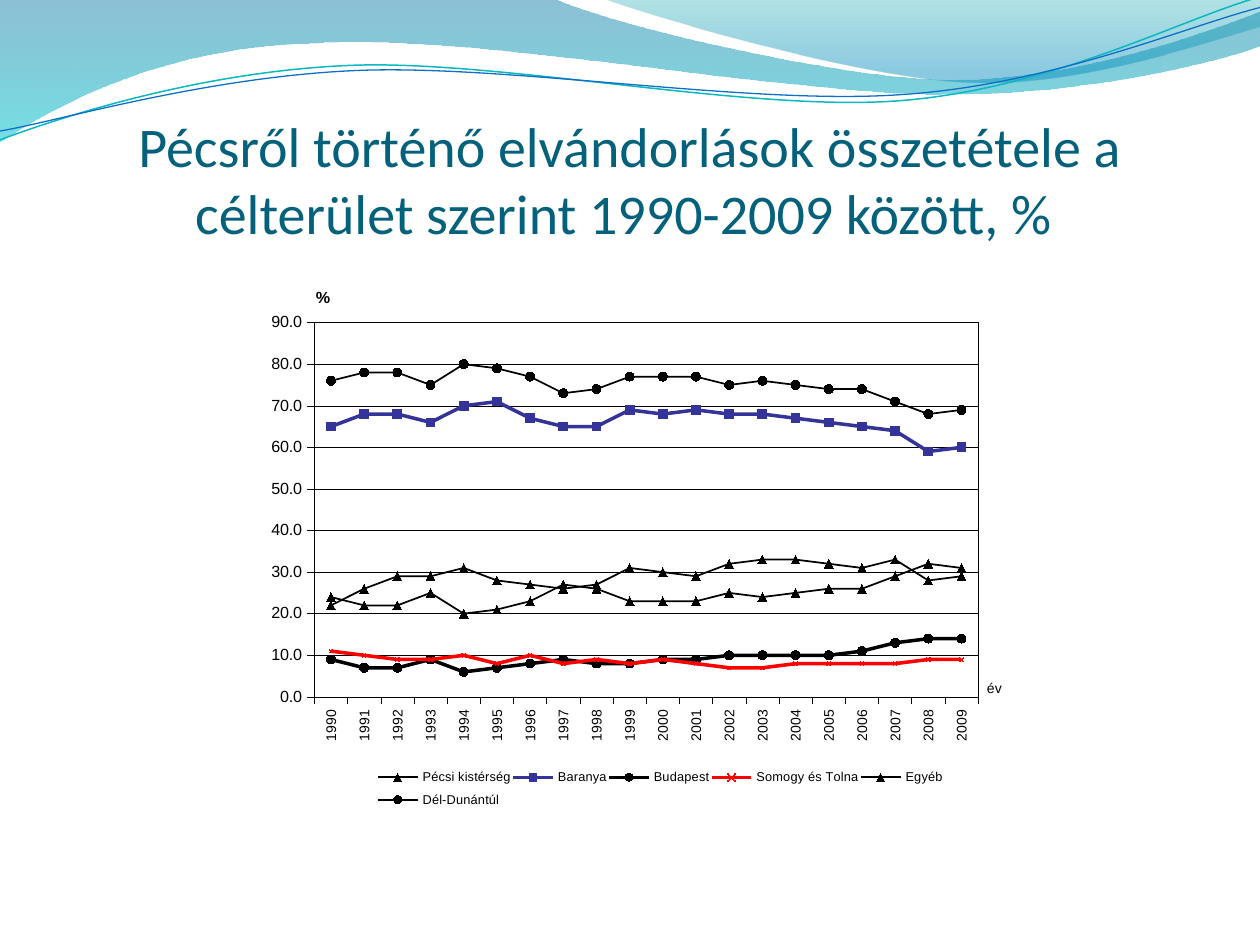
import math

from lxml import etree
from pptx import Presentation
from pptx.chart.data import CategoryChartData
from pptx.dml.color import RGBColor
from pptx.enum.chart import XL_CHART_TYPE, XL_LEGEND_POSITION, XL_MARKER_STYLE, XL_TICK_MARK
from pptx.enum.text import MSO_ANCHOR, PP_ALIGN
from pptx.oxml import parse_xml
from pptx.oxml.ns import nsdecls, qn
from pptx.util import Pt

TRIANGLE, SQUARE = XL_MARKER_STYLE.TRIANGLE, XL_MARKER_STYLE.SQUARE
CIRCLE, CROSS = XL_MARKER_STYLE.CIRCLE, XL_MARKER_STYLE.X
OUTSIDE, NO_TICK = XL_TICK_MARK.OUTSIDE, XL_TICK_MARK.NONE
LINE_MARKERS, BOTTOM = XL_CHART_TYPE.LINE_MARKERS, XL_LEGEND_POSITION.BOTTOM
MIDDLE, CENTER = MSO_ANCHOR.MIDDLE, PP_ALIGN.CENTER

THEME = {
    "title": "04617B", "ink": "000000", "paper": "FFFFFF", "baranya": "333399", "somogy": "FF0000",
    "title_font": "Calibri", "chart_font": "Arial",
    "title_size": 32, "year_size": 8, "value_size": 9.2, "legend_size": 7.3, "hairline": 0.25,
}

# Content
TITLE = "Pécsről történő elvándorlások összetétele a célterület szerint 1990-2009 között, % "
YEARS = [str(year) for year in range(1990, 2010)]
# name, colour, line width, marker, marker size, values
DESTINATIONS = [
    ("Pécsi kistérség", "ink", 1, TRIANGLE, 5,
     [22, 26, 29, 29, 31, 28, 27, 26, 27, 31, 30, 29, 32, 33, 33, 32, 31, 33, 28, 29]),
    ("Baranya", "baranya", 2, SQUARE, 5,
     [65, 68, 68, 66, 70, 71, 67, 65, 65, 69, 68, 69, 68, 68, 67, 66, 65, 64, 59, 60]),
    ("Budapest", "ink", 2, CIRCLE, 5,
     [9, 7, 7, 9, 6, 7, 8, 9, 8, 8, 9, 9, 10, 10, 10, 10, 11, 13, 14, 14]),
    ("Somogy és Tolna", "somogy", 2, CROSS, 2,
     [11, 10, 9, 9, 10, 8, 10, 8, 9, 8, 9, 8, 7, 7, 8, 8, 8, 8, 9, 9]),
    ("Egyéb", "ink", 1, TRIANGLE, 5,
     [24, 22, 22, 25, 20, 21, 23, 27, 26, 23, 23, 23, 25, 24, 25, 26, 26, 29, 32, 31]),
    ("Dél-Dunántúl", "ink", 1, CIRCLE, 5,
     [76, 78, 78, 75, 80, 79, 77, 73, 74, 77, 77, 77, 75, 76, 75, 74, 74, 71, 68, 69]),
]

# Header waves: a start, then line ends (one point) or curves (three points)
FILLED_WAVES = [
    ([[(0, 0)], [(316.8, -0.7)],
      [(342.7, 12.2), (478.1, 45.4), (545.8, 45.4)], [(614.2, 45.4), (689.8, 18.7), (720, 6.5)],
      [(720.7, 25.9)], [(707.8, 31.7), (626.4, 54.7), (537.1, 54)],
      [(447.8, 54), (275, 20.2), (185, 24.5)], [(92.9, 25.9), (33.1, 59.8), (-0.7, 81.4)]],
     [(0, "0074A1", 45), (1, "00C6CF", 55)]),
    ([[(344.9, -0.7)], [(366.5, 7.9), (491, 44.6), (553.7, 46.8)],
      [(616.3, 49.7), (691.9, 23), (720, 15.1)], [(720, 0)]],
     [(0, "00A1A9", 30), (0.8, "008BBF", 45)]),
]
# segments, centre, colour, width
LINE_WAVES = [
    ([[(0, 79.9)], [(34.6, 67), (113.8, 41), (199.4, 37.4)],
      [(284.4, 33.8), (427, 64.1), (513.4, 57.6)], [(599.8, 51.1), (675.4, 10.8), (718.6, -1.4)]],
     (359.3, 41.4), "0AB8BF", 0.85),
    ([[(0, 74.9)], [(33.8, 69.1), (118.1, 43.9), (203.8, 40.3)],
      [(290.2, 36.7), (429.8, 60.5), (516.2, 54)], [(601.9, 48.2), (677.5, 15.1), (720, 4.3)]],
     (359.6, 42.5), "0F6FC6", 0.75),
]
LINE_TILT = -2.7


def rgb(name):
    return RGBColor.from_string(THEME.get(name, name))


def turn(point, centre, degrees):
    angle = math.radians(degrees)
    dx, dy = point[0] - centre[0], point[1] - centre[1]
    return (centre[0] + dx * math.cos(angle) - dy * math.sin(angle),
            centre[1] + dx * math.sin(angle) + dy * math.cos(angle))


def add_wave(shapes, segments, closed):
    """Build the outline, then merge each run of three points into one curve."""
    start, *rest = [(Pt(x), Pt(y)) for segment in segments for x, y in segment]
    builder = shapes.build_freeform(*start)
    builder.add_line_segments(rest, close=closed)
    wave = builder.convert_to_shape()
    wave.shadow.inherit = False
    steps = iter(list(wave._element.iter(qn("a:lnTo"))))
    for segment in segments[1:]:
        first, *others = [next(steps) for _ in segment]
        if others:
            first.tag = qn("a:cubicBezTo")
            for step in others:
                first.append(step[0])
                step.getparent().remove(step)
    return wave


def set_font(font, size, bold=False):
    font.name, font.size, font.bold = THEME["chart_font"], Pt(size), bold
    font.color.rgb = rgb("ink")


def set_layout(parent, index, x, y, w=None, h=None, inner=False):
    """Place a chart part by fractions of the chart area."""
    for old in parent.findall(qn("c:layout")):
        parent.remove(old)
    layout = parse_xml(f"<c:layout {nsdecls('c')}><c:manualLayout/></c:layout>")
    settings = [("layoutTarget", "inner")] if inner else []
    settings += [("xMode", "edge"), ("yMode", "edge"), ("x", x), ("y", y)]
    if w is not None:
        settings += [("w", w), ("h", h)]
    for tag, value in settings:
        etree.SubElement(layout[0], qn(f"c:{tag}")).set("val", str(value))
    parent.insert(index, layout)


def style_axis(axis, title, size, bold, x, y):
    axis.major_tick_mark, axis.minor_tick_mark = OUTSIDE, NO_TICK
    set_font(axis.tick_labels.font, size)
    axis.format.line.color.rgb = rgb("ink")
    axis.format.line.width = Pt(THEME["hairline"])
    frame = axis.axis_title.text_frame
    frame.text = title
    set_font(frame.paragraphs[0].runs[0].font, size, bold)
    body = frame._txBody.find(qn("a:bodyPr"))
    body.set("rot", "0")
    body.set("vert", "horz")
    set_layout(axis.axis_title.element, 1, x, y)


prs = Presentation()
prs.slide_width, prs.slide_height = Pt(720), Pt(540)
slide = prs.slides.add_slide(prs.slide_layouts[6])

# Header waves
for segments, stops in FILLED_WAVES:
    wave = add_wave(slide.shapes, segments, True)
    wave.line.fill.background()
    wave.fill.gradient()
    wave.fill.gradient_angle = 270
    for stop, (position, colour, _) in zip(wave.fill.gradient_stops, stops):
        stop.position, stop.color.rgb = position, rgb(colour)
    for colour_xml, (_, _, opacity) in zip(wave._element.iter(qn("a:srgbClr")), stops):
        etree.SubElement(colour_xml, qn("a:alpha")).set("val", str(opacity * 1000))
wave_lines = slide.shapes.add_group_shape()
for segments, centre, colour, width in LINE_WAVES:
    level = [[turn(point, centre, -LINE_TILT) for point in segment] for segment in segments]
    wave = add_wave(wave_lines.shapes, level, False)
    wave.rotation = LINE_TILT
    wave.fill.background()
    wave.line.color.rgb, wave.line.width = rgb(colour), Pt(width)

# Title
heading = slide.shapes.add_textbox(Pt(36), Pt(55.4), Pt(648), Pt(90)).text_frame
heading.word_wrap = True
heading.vertical_anchor = MIDDLE
heading.margin_left = heading.margin_right = heading.margin_bottom = 0
heading.margin_top = Pt(3.6)
heading.text = TITLE
heading.paragraphs[0].alignment = CENTER
title_font = heading.paragraphs[0].runs[0].font
title_font.name, title_font.size = THEME["title_font"], Pt(THEME["title_size"])
title_font.color.rgb = rgb("title")

# Migration chart
data = CategoryChartData(number_format="0.0")
data.categories = YEARS
for name, *_, values in DESTINATIONS:
    data.add_series(name, values)
chart = slide.shapes.add_chart(LINE_MARKERS, Pt(144.7), Pt(151.2), Pt(437), Pt(316), data).chart
chart.has_title = False
set_font(chart.font, THEME["year_size"])
chart.plots[0].vary_by_categories = False
for series, (_, colour, width, marker, size, _) in zip(chart.plots[0].series, DESTINATIONS):
    series.smooth = False
    series.format.line.color.rgb, series.format.line.width = rgb(colour), Pt(width)
    series.marker.style, series.marker.size = marker, size
    series.marker.format.fill.solid()
    series.marker.format.fill.fore_color.rgb = rgb(colour)
    series.marker.format.line.color.rgb = rgb(colour)

# Axes
years, shares = chart.category_axis, chart.value_axis
style_axis(years, "év", THEME["year_size"], False, 0.956, 0.745)
years.tick_labels._element.find(qn("c:txPr")).find(qn("a:bodyPr")).set("rot", "-5400000")
style_axis(shares, "%", THEME["value_size"], True, 0.078, 0.035)
shares.minimum_scale, shares.maximum_scale, shares.major_unit = 0, 90, 10
shares.tick_labels.number_format, shares.tick_labels.number_format_is_linked = "0.0", False
shares.major_gridlines.format.line.color.rgb = rgb("ink")
shares.major_gridlines.format.line.width = Pt(THEME["hairline"])

# Legend and plot frame
chart.has_legend = True
chart.legend.position = BOTTOM
chart.legend.include_in_layout = False
set_font(chart.legend.font, THEME["legend_size"])
set_layout(chart.element.find(".//" + qn("c:legend")), 1, 0.16, 0.9, 0.745, 0.095)
plot_area = chart.element.find(".//" + qn("c:plotArea"))
set_layout(plot_area, 0, 0.08, 0.105, 0.868, 0.677, inner=True)
plot_area.append(parse_xml(
    f'<c:spPr {nsdecls("c", "a")}><a:solidFill><a:srgbClr val="{THEME["paper"]}"/></a:solidFill>'
    f'<a:ln w="{Pt(THEME["hairline"])}"><a:solidFill><a:srgbClr val="{THEME["ink"]}"/>'
    '</a:solidFill></a:ln></c:spPr>'))

prs.save("out.pptx")
